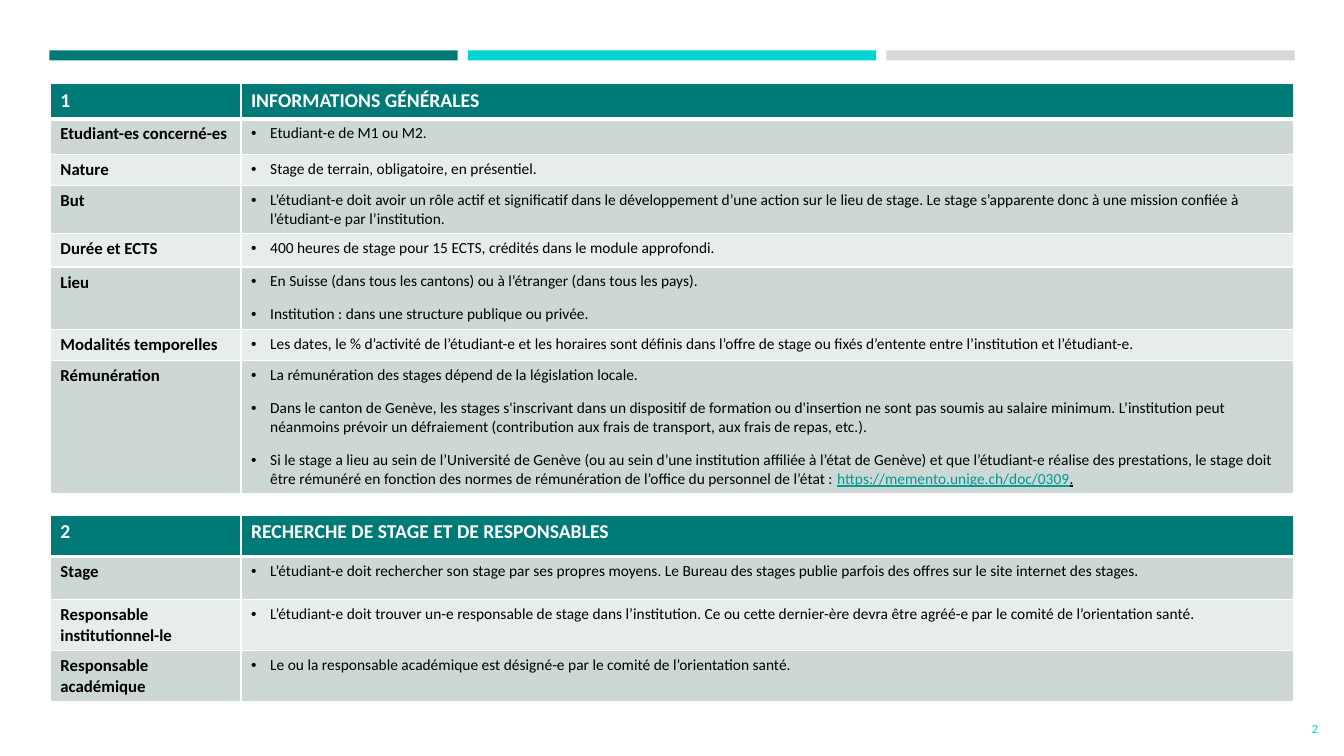
from lxml import etree
from pptx import Presentation
from pptx.dml.color import RGBColor
from pptx.enum.shapes import MSO_SHAPE
from pptx.enum.text import MSO_ANCHOR, PP_ALIGN
from pptx.oxml.ns import qn
from pptx.util import Pt

RECTANGLE = MSO_SHAPE.RECTANGLE
MIDDLE = MSO_ANCHOR.MIDDLE
RIGHT = PP_ALIGN.RIGHT

PX = 9144  # 100 px to the inch
BLANK_LAYOUT = 6
COLORS = {
    "teal": "007A77", "cyan": "00D6D1", "gray": "D8D8D8", "link": "009A96",
    "dark_band": "CCD7D6", "light_band": "E7ECEC", "white": "FFFFFF", "black": "000000",
}
FORMATS = {
    "header": {"size": Pt(14), "bold": True, "color": "white"},
    "label": {"size": Pt(12), "bold": True, "color": "black"},
    "body": {"size": Pt(11), "bold": False, "color": "black"},
    "link": {"size": Pt(11), "bold": False, "underline": True, "color": "link"},
    "link_end": {"size": Pt(11), "bold": False, "underline": True, "color": "black"},
    "page_number": {"size": Pt(9), "bold": False, "color": "cyan"},
}

BARS = ["teal", "cyan", "gray"]
TABLE_LEFT, COLUMN_WIDTHS = 50, (189, 1044)
BULLET_INDENT = 19

# Each row: height, label, bullets; a bullet is a text or a list of (text, format) spans.
GENERAL_ROWS = [
    (35, "Etudiant-es concerné-es", ["Etudiant-e de M1 ou M2."]),
    (31, "Nature", ["Stage de terrain, obligatoire, en présentiel."]),
    (48, "But", [
        "L’étudiant-e doit avoir un rôle actif et significatif dans le développement d’une action "
        "sur le lieu de stage. Le stage s’apparente donc à une mission confiée à l’étudiant-e par "
        "l’institution."]),
    (33, "Durée et ECTS", [
        "400 heures de stage pour 15 ECTS, crédités dans le module approfondi."]),
    (61, "Lieu", [
        "En Suisse (dans tous les cantons) ou à l’étranger (dans tous les pays).",
        "Institution : dans une structure publique ou privée."]),
    (31, "Modalités temporelles", [
        "Les dates, le % d’activité de l’étudiant-e et les horaires sont définis dans l’offre de "
        "stage ou fixés d’entente entre l’institution et l’étudiant-e."]),
    (131, "Rémunération", [
        "La rémunération des stages dépend de la législation locale.",
        "Dans le canton de Genève, les stages s'inscrivant dans un dispositif de formation ou "
        "d'insertion ne sont pas soumis au salaire minimum. L’institution peut néanmoins prévoir "
        "un défraiement (contribution aux frais de transport, aux frais de repas, etc.).",
        [("Si le stage a lieu au sein de l’Université de Genève (ou au sein d’une institution "
          "affiliée à l’état de Genève) et que l’étudiant-e réalise des prestations, le stage doit "
          "être rémunéré en fonction des normes de rémunération de l’office du personnel de "
          "l’état : ", "body"),
         ("https://memento.unige.ch/doc/0309", "link"),
         (".", "link_end")]]),
]
SEARCH_ROWS = [
    (43, "Stage", [
        "L’étudiant-e doit rechercher son stage par ses propres moyens. Le Bureau des stages "
        "publie parfois des offres sur le site internet des stages."]),
    (50, "Responsable institutionnel-le", [
        "L’étudiant-e doit trouver un-e responsable de stage dans l’institution. Ce ou cette "
        "dernier-ère devra être agréé-e par le comité de l’orientation santé."]),
    (50, "Responsable académique", [
        "Le ou la responsable académique est désigné-e par le comité de l’orientation santé."]),
]


def rgb(name):
    return RGBColor.from_string(COLORS[name])


def add_span(para, text, format_name):
    span = para.add_run()
    span.text = text
    span.font.name = "Calibri"
    for attribute, value in FORMATS[format_name].items():
        if attribute == "color":
            span.font.color.rgb = rgb(value)
        else:
            setattr(span.font, attribute, value)


def add_bullets(cell, bullets):
    for index, bullet in enumerate(bullets):
        frame = cell.text_frame
        para = frame.add_paragraph() if index else frame.paragraphs[0]
        properties = para._p.get_or_add_pPr()
        properties.set("marL", str(BULLET_INDENT * PX))
        properties.set("indent", str(-BULLET_INDENT * PX))
        etree.SubElement(properties, qn("a:buFont"), typeface="Arial")
        etree.SubElement(properties, qn("a:buChar"), char="•")
        para.space_before = Pt(10 if index else 0)
        spans = [(bullet, "body")] if isinstance(bullet, str) else bullet
        for text, format_name in spans:
            add_span(para, text, format_name)


def style_cell(cell, fill, top, bottom):
    """Draw white borders (top and bottom widths in points), then the fill."""
    properties = cell._tc.get_or_add_tcPr()
    for side, width in (("L", 1), ("R", 1), ("T", top), ("B", bottom)):
        line = etree.SubElement(properties, qn(f"a:ln{side}"), w=str(Pt(width)))
        paint = etree.SubElement(line, qn("a:solidFill"))
        etree.SubElement(paint, qn("a:srgbClr"), val=COLORS["white"])
    cell.fill.solid()
    cell.fill.fore_color.rgb = rgb(fill)


def add_section(page, top, header_height, number, title, rows):
    heights = [header_height] + [height for height, _, _ in rows]
    table = page.shapes.add_table(
        len(heights), len(COLUMN_WIDTHS), TABLE_LEFT * PX, top * PX,
        sum(COLUMN_WIDTHS) * PX, sum(heights) * PX).table
    for column, width in zip(table.columns, COLUMN_WIDTHS):
        column.width = width * PX
    for index, height in enumerate(heights):
        table.rows[index].height = height * PX
        fill = "teal" if index == 0 else ("light_band", "dark_band")[index % 2]
        for cell in table.rows[index].cells:
            style_cell(cell, fill, 3 if index == 1 else 1, 3 if index == 0 else 1)
    for column, text in enumerate((number, title)):
        add_span(table.cell(0, column).text_frame.paragraphs[0], text, "header")
    for index, (_, label, bullets) in enumerate(rows, start=1):
        add_span(table.cell(index, 0).text_frame.paragraphs[0], label, "label")
        add_bullets(table.cell(index, 1), bullets)


def add_bar(page, left, color):
    bar = page.shapes.add_shape(RECTANGLE, left * PX, 50 * PX, 405 * PX, 10 * PX)
    bar.shadow.inherit = False
    bar.fill.solid()
    bar.fill.fore_color.rgb = rgb(color)
    bar.line.fill.background()


def add_page_number(page, number):
    box = page.shapes.add_textbox(1202 * PX, 703 * PX, 115 * PX, 40 * PX)
    frame = box.text_frame
    frame.word_wrap = True
    frame.vertical_anchor = MIDDLE
    para = frame.paragraphs[0]
    para.alignment = RIGHT
    add_span(para, number, "page_number")


def main():
    deck = Presentation()
    deck.slide_width, deck.slide_height = 1333 * PX, 750 * PX
    page = deck.slides.add_slide(deck.slide_layouts[BLANK_LAYOUT])
    for index, color in enumerate(BARS):
        add_bar(page, 49 + 415 * index, color)
    add_section(page, 83, 35, "1", "INFORMATIONS GÉNÉRALES", GENERAL_ROWS)
    add_section(page, 511, 41, "2", "RECHERCHE DE STAGE ET DE RESPONSABLES", SEARCH_ROWS)
    add_page_number(page, "2")
    deck.save("out.pptx")


if __name__ == "__main__":
    main()
